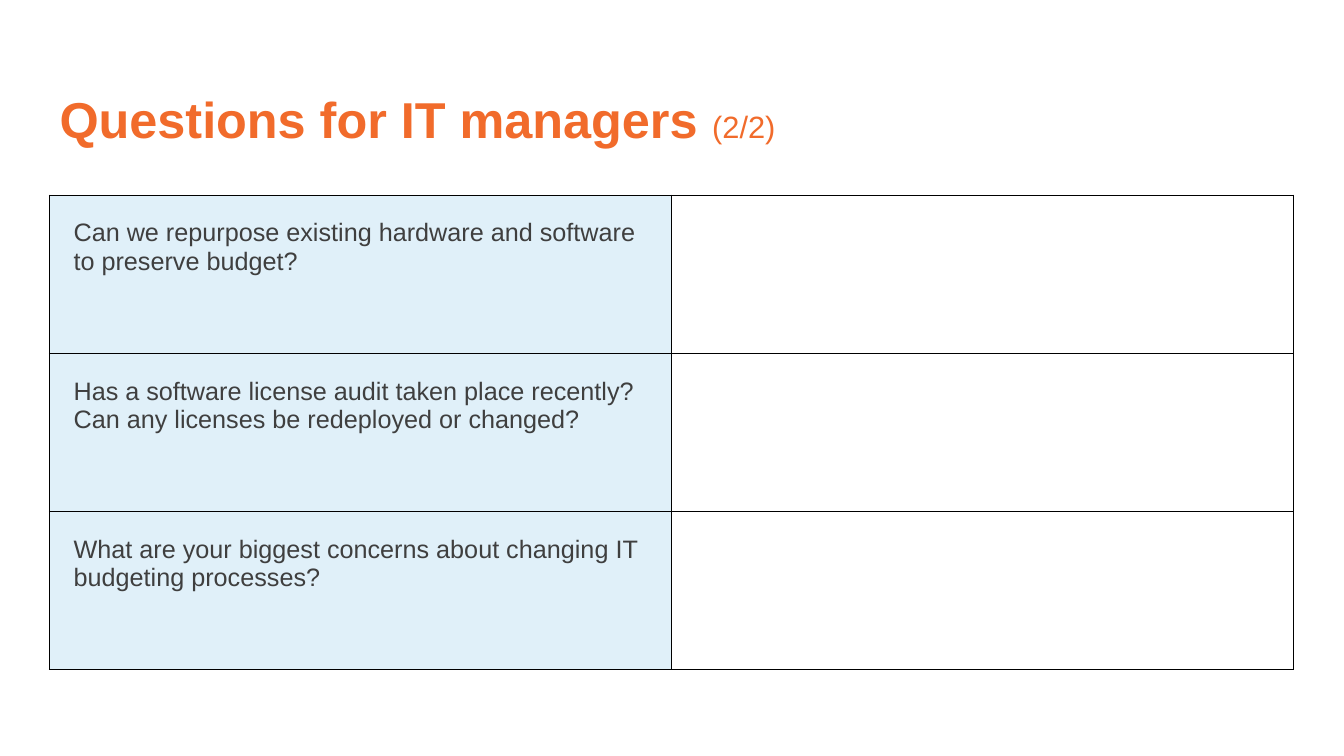
from dataclasses import dataclass

from lxml.etree import SubElement
from pptx import Presentation
from pptx.dml.color import RGBColor
from pptx.enum.text import MSO_ANCHOR, MSO_AUTO_SIZE, PP_ALIGN
from pptx.oxml.ns import qn
from pptx.util import Inches, Pt


@dataclass(frozen=True)
class Theme:
    """Colours, type sizes and grid measures of the deck."""

    font: str = "Arial"
    accent: str = "F16B2B"
    body: str = "3F3F3F"
    question_fill: str = "E0F0F9"
    answer_fill: str = "FFFFFF"
    border: str = "000000"
    title_size: int = 36
    counter_size: int = 22
    body_size: int = 18
    border_width: float = 0.75
    margin: float = 0.49
    column: float = 6.17
    row: float = 1.57
    cell_inset: float = 0.24


class WorksheetSlide:
    """A title-only slide laid out on the theme's grid."""

    def __init__(self, presentation, theme):
        """Add the slide to the presentation."""
        self.theme = theme
        self.slide = presentation.slides.add_slide(presentation.slide_layouts[5])

    def place(self, column, row, columns, rows):
        """Turn grid cells into left, top, width and height."""
        theme = self.theme
        return (
            Inches(theme.margin + column * theme.column),
            Inches(theme.margin + row * theme.row),
            Inches(columns * theme.column),
            Inches(rows * theme.row),
        )

    def style(self, font, size, colour, bold=False):
        """Apply the theme font with a size, colour and weight."""
        font.name = self.theme.font
        font.size = Pt(size)
        font.bold = bold
        font.color.rgb = RGBColor.from_string(colour)

    def title(self, heading, counter, area):
        """Fill the title placeholder with a heading and a lighter counter."""
        title = self.slide.shapes.title
        title.left, title.top, title.width, title.height = self.place(*area)
        frame = title.text_frame
        frame.word_wrap = True
        frame.auto_size = MSO_AUTO_SIZE.NONE
        frame.vertical_anchor = MSO_ANCHOR.MIDDLE
        paragraph = frame.paragraphs[0]
        paragraph.alignment = PP_ALIGN.LEFT
        paragraph.line_spacing = 0.9
        sizes = (self.theme.title_size, self.theme.counter_size)
        for wording, size, bold in zip((heading + " ", counter), sizes, (True, False)):
            run = paragraph.add_run()
            run.text = wording
            self.style(run.font, size, self.theme.accent, bold)

    def outline(self, cell):
        """Draw the four borders of a table cell."""
        properties = cell._tc.get_or_add_tcPr()
        for position, side in enumerate(("a:lnL", "a:lnR", "a:lnT", "a:lnB")):
            line = SubElement(properties, qn(side), w=str(Pt(self.theme.border_width)))
            fill = SubElement(line, qn("a:solidFill"))
            SubElement(fill, qn("a:srgbClr"), val=self.theme.border)
            properties.insert(position, line)

    def cell(self, cell, wording, fill):
        """Fill, pad, outline and word one table cell."""
        inset = Inches(self.theme.cell_inset)
        cell.margin_left = cell.margin_right = inset
        cell.margin_top = cell.margin_bottom = inset
        cell.fill.solid()
        cell.fill.fore_color.rgb = RGBColor.from_string(fill)
        self.outline(cell)
        cell.text_frame.text = wording
        for run in cell.text_frame.paragraphs[0].runs:
            self.style(run.font, self.theme.body_size, self.theme.body)

    def question_table(self, questions, column, row):
        """Add a table with questions on the left and answer space on the right."""
        area = self.place(column, row, 2, len(questions))
        table = self.slide.shapes.add_table(len(questions), 2, *area).table
        table.first_row = table.horz_banding = False
        for question, line in zip(questions, table.rows):
            prompt, answer = line.cells
            self.cell(prompt, question, self.theme.question_fill)
            self.cell(answer, "", self.theme.answer_fill)


def main():
    """Build and save the slide."""
    presentation = Presentation()
    presentation.slide_width = Inches(13.33)
    presentation.slide_height = Inches(7.5)
    worksheet = WorksheetSlide(presentation, Theme())
    title_rows = 0.92
    worksheet.title("Questions for IT managers", "(2/2)", (0, 0, 1.86, title_rows))
    questions = (
        "Can we repurpose existing hardware and software to preserve budget?",
        "Has a software license audit taken place recently? "
        "Can any licenses be redeployed or changed?",
        "What are your biggest concerns about changing IT budgeting processes?",
    )
    worksheet.question_table(questions, 0, title_rows)
    presentation.save("out.pptx")


if __name__ == "__main__":
    main()
